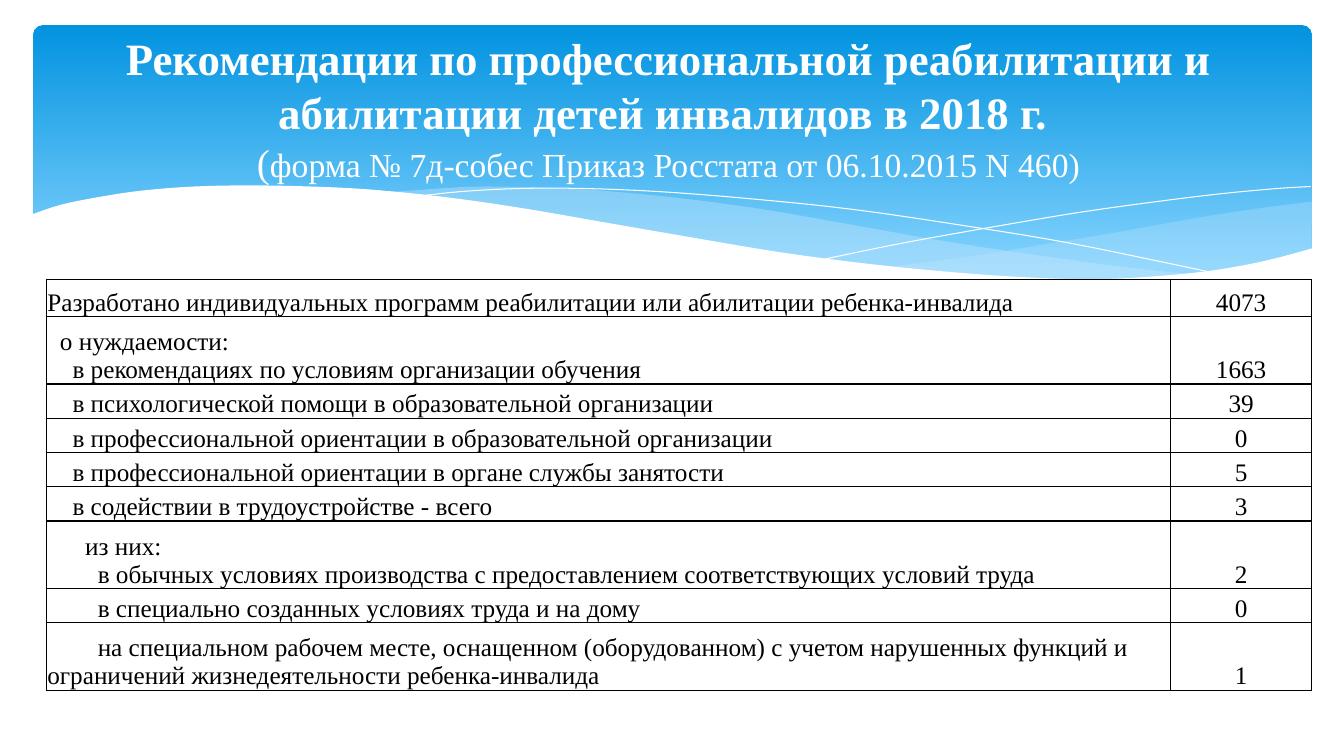
from lxml import etree
from pptx import Presentation
from pptx.dml.color import RGBColor
from pptx.enum.shapes import MSO_SHAPE
from pptx.enum.text import MSO_ANCHOR, PP_ALIGN
from pptx.oxml.ns import qn
from pptx.util import Inches, Pt

ROUND = MSO_SHAPE.ROUNDED_RECTANGLE
MIDDLE, BOTTOM = MSO_ANCHOR.MIDDLE, MSO_ANCHOR.BOTTOM
LEFT, CENTER = PP_ALIGN.LEFT, PP_ALIGN.CENTER

FONT = "Times New Roman"
HEX = {"white": "FFFFFF", "black": "000000", "mist": "C6E7FC",
       "deep": "0293E0", "sky": "83D3FE"}

# Title lines: text, size, bold
TITLE = [
    [("Рекомендации по профессиональной реабилитации и "
      "абилитации детей инвалидов в 2018 г. ", 32, True)],
    [("(", 28, False),
     ("форма № 7д-собес Приказ Росстата от 06.10.2015 N 460)", 24, False)],
]

# Table rows: height, lines as (indent level, text), value
ROWS = [
    (0.37, [(0, "Разработано индивидуальных программ реабилитации "
                "или абилитации ребенка-инвалида")], "4073"),
    (0.67, [(1, "о нуждаемости:"),
            (2, "в рекомендациях по условиям организации обучения")], "1663"),
    (0.34, [(2, "в психологической помощи в образовательной организации")], "39"),
    (0.34, [(2, "в профессиональной ориентации в образовательной организации")], "0"),
    (0.34, [(2, "в профессиональной ориентации в органе службы занятости")], "5"),
    (0.34, [(2, "в содействии в трудоустройстве - всего")], "3"),
    (0.67, [(3, "из них:"),
            (4, "в обычных условиях производства с предоставлением "
                "соответствующих условий труда")], "2"),
    (0.34, [(4, "в специально созданных условиях труда и на дому")], "0"),
    (0.67, [(4, "на специальном рабочем месте, оснащенном (оборудованном) с учетом "
                "нарушенных функций и ограничений жизнедеятельности "
                "ребенка-инвалида")], "1"),
]
COLS = [11.15, 1.4]
STEP = 0.125  # indent per level

# Waves: each edge is a smooth curve through its points
RIGHT = [
    [(13.01, 2), (12.46, 2.07), (11.88, 2.16), (11.1, 2.3), (10.38, 2.42),
     (9.72, 2.53), (8.82, 2.65)],
    [(8.82, 2.65), (9.4, 2.71), (10.09, 2.76), (10.71, 2.78), (11.26, 2.77),
     (11.86, 2.72), (12.38, 2.63), (13.01, 2.47)],
]
MID = [
    [(11.9, 2.73), (11.16, 2.65), (10.34, 2.54), (9.41, 2.4), (8.39, 2.22),
     (7.59, 2.08), (6.86, 1.98), (6.19, 1.91), (5.6, 1.87), (4.82, 1.85),
     (4.37, 1.87), (3.82, 1.91)],
    [(3.82, 1.91), (4.56, 1.99), (5.39, 2.11), (5.99, 2.22), (7.06, 2.4),
     (8.02, 2.55), (8.87, 2.66), (9.63, 2.74), (10.3, 2.77), (10.9, 2.78),
     (11.43, 2.77), (11.9, 2.73)],
]
FRONT = [
    [(13.03, 2.46), (12.54, 2.59), (11.98, 2.69), (11.34, 2.75), (10.78, 2.77),
     (10.15, 2.75), (9.44, 2.7), (8.63, 2.62), (7.72, 2.5), (6.71, 2.33),
     (5.96, 2.2), (5.21, 2.07), (4.53, 1.97), (3.9, 1.9), (3.33, 1.86),
     (2.58, 1.84), (1.94, 1.85), (1.42, 1.89), (1.01, 1.95), (0.61, 2.03),
     (0.31, 2.13)],
    [(0.31, 3.29), (13.03, 3.29)],
]
FALL = [[(4.12, 1.95), (4.58, 1.9), (5.16, 1.87), (5.77, 1.87), (6.52, 1.9),
         (7.42, 1.97), (8.48, 2.08), (9.7, 2.26), (10.6, 2.41), (11.58, 2.61),
         (12.1, 2.72)]]
RISE = [[(8.18, 2.57), (8.96, 2.41), (9.97, 2.23), (10.75, 2.1), (11.55, 1.99),
         (12.13, 1.92), (12.67, 1.87), (13, 1.85)]]
# Back to front: edges, fill, opacity in percent (no fill means a thin line)
WAVES = [(RIGHT, "mist", 29), (MID, "mist", 40), (FALL, None, 0),
         (RISE, None, 0), (FRONT, "white", 100)]


def rgb(name):
    return RGBColor.from_string(HEX[name])


def smooth(pts, steps=4):
    """Catmull-Rom curve through pts."""
    ends = [pts[0], *pts, pts[-1]]
    out = [pts[0]]
    for a, b, c, d in zip(ends, ends[1:], ends[2:], ends[3:]):
        for i in range(1, steps + 1):
            t = i / steps
            out.append(tuple(
                (2 * q + (r - p) * t + (2 * p - 5 * q + 4 * r - s) * t ** 2
                 + (3 * q - p - 3 * r + s) * t ** 3) / 2
                for p, q, r, s in zip(a, b, c, d)))
    return out


def wave(shapes, edges, fill, alpha):
    pts = [(Inches(x), Inches(y)) for edge in edges for x, y in smooth(edge)]
    path = shapes.build_freeform(*pts[0])
    path.add_line_segments(pts[1:], close=fill is not None)
    shape = path.convert_to_shape()
    shape.shadow.inherit = False
    if fill is None:
        shape.fill.background()
        shape.line.color.rgb = rgb("white")
        shape.line.width = Pt(0)
        return
    shape.line.fill.background()
    shape.fill.solid()
    shape.fill.fore_color.rgb = rgb(fill)
    if alpha < 100:
        tint = shape._element.spPr.find(qn("a:solidFill"))[0]
        etree.SubElement(tint, qn("a:alpha"), val=str(alpha * 1000))


def write(para, text, size, color, bold=False):
    run = para.add_run()
    run.text = text
    run.font.name, run.font.size, run.font.bold = FONT, Pt(size), bold
    run.font.color.rgb = rgb(color)


def style(cell):
    cell.vertical_anchor = BOTTOM
    cell.margin_left = cell.margin_top = cell.margin_right = Inches(0.01)
    cell.margin_bottom = 0
    props = cell._tc.get_or_add_tcPr()
    for side in ("lnL", "lnR", "lnT", "lnB"):
        edge = etree.SubElement(props, qn("a:" + side), w=str(Pt(1)))
        fill = etree.SubElement(edge, qn("a:solidFill"))
        etree.SubElement(fill, qn("a:srgbClr"), val=HEX["black"])
    cell.fill.background()


def main():
    deck = Presentation()
    deck.slide_width, deck.slide_height = Inches(13.33), Inches(7.5)
    shapes = deck.slides.add_slide(deck.slide_layouts[6]).shapes

    # Blue banner
    band = shapes.add_shape(ROUND, Inches(0.33), Inches(0.25),
                            Inches(12.68), Inches(2.7))
    band.adjustments[0] = 0.034
    band.shadow.inherit = False
    band.line.fill.background()
    band.fill.gradient()
    band.fill.gradient_angle = 270
    for stop, name, pos in zip(band.fill.gradient_stops, ("deep", "sky"), (0, 0.9)):
        stop.color.rgb = rgb(name)
        stop.position = pos

    for edges, fill, alpha in WAVES:
        wave(shapes, edges, fill, alpha)

    # Title
    frame = shapes.add_textbox(Inches(0.88), Inches(0.25),
                               Inches(11.5), Inches(1.65)).text_frame
    frame.word_wrap = True
    frame.vertical_anchor = MIDDLE
    para = frame.paragraphs[0]
    para.alignment = CENTER
    for i, line in enumerate(TITLE):
        if i:
            para.add_line_break()
        for text, size, bold in line:
            write(para, text, size, "white", bold)

    # Table
    high = sum(row[0] for row in ROWS)
    table = shapes.add_table(len(ROWS), len(COLS), Inches(0.46), Inches(2.77),
                             Inches(sum(COLS)), Inches(high)).table
    table.first_row = table.horz_banding = False
    for col, wide in zip(table.columns, COLS):
        col.width = Inches(wide)
    for row, (tall, lines, value) in zip(table.rows, ROWS):
        row.height = Inches(tall)
        parts = ((lines, LEFT), ([(0, value)], CENTER))
        for cell, (texts, align) in zip(row.cells, parts):
            style(cell)
            for i, (level, text) in enumerate(texts):
                frame = cell.text_frame
                para = frame.add_paragraph() if i else frame.paragraphs[0]
                para.alignment = align
                para._p.get_or_add_pPr().set("indent", str(Inches(level * STEP)))
                write(para, text, 18, "black")

    deck.save("out.pptx")


if __name__ == "__main__":
    main()
